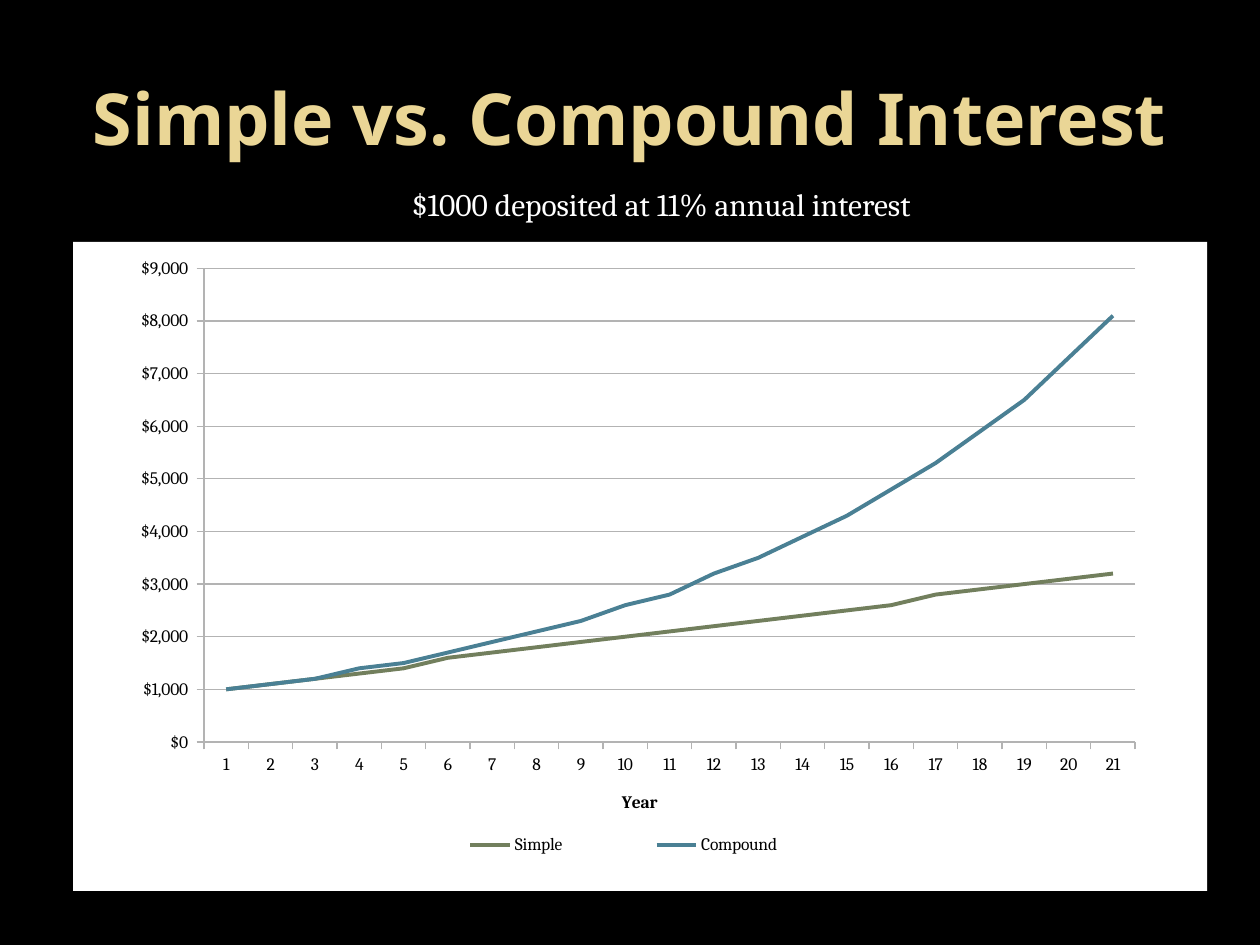
from lxml.etree import SubElement
from pptx import Presentation
from pptx.chart.data import CategoryChartData
from pptx.dml.color import RGBColor
from pptx.enum.chart import XL_CHART_TYPE as ChartType, XL_LEGEND_POSITION as LegendPosition
from pptx.enum.chart import XL_TICK_MARK as TickMark
from pptx.enum.text import MSO_ANCHOR as Anchor, PP_ALIGN as Align
from pptx.oxml import parse_xml
from pptx.oxml.ns import nsdecls, qn
from pptx.util import Inches, Pt

COLORS = {"background": "000000", "title": "EAD696", "subtitle": "FFFFFF",
          "chart": "FFFFFF", "label": "000000", "grid": "B3B3B3",
          "Simple": "727F5D", "Compound": "4A8094"}
TITLE = "Simple vs. Compound Interest"
SUBTITLE = "$1000 deposited at 11% annual interest"
DEPOSIT, PERCENT = 1000, 11
YEARS = range(1, 22)
# Balances to the nearest hundred dollars
SERIES = {
    "Simple": [round(DEPOSIT + DEPOSIT * PERCENT * (year - 1) // 100, -2) for year in YEARS],
    "Compound": [round(DEPOSIT * (1 + PERCENT / 100) ** (year - 1), -2) for year in YEARS],
}
MONEY = '"$"#,##0_);[Red]\\("$"#,##0\\)'
TITLE_BOX = (0.5, 0.3, 9, 1.25)
SUBTITLE_BOX = (3.17, 1.42, 4.53, 0.4)
CHART_BOX = (0.58, 1.92, 9, 5.15)
# Inches from the top left corner of the chart
PLOT_LAYOUT = {"x": 1.04, "y": 0.21, "w": 7.39, "h": 3.76}
LEGEND_LAYOUT = {"x": 2.45, "y": 4.63, "w": 3.84, "h": 0.31}
AXIS_TITLE_LAYOUT = {"x": 4.33, "y": 4.33}


def color(name):
    return RGBColor.from_string(COLORS[name])


def set_font(font, **values):
    for name, value in values.items():
        if name == "color":
            font.color.rgb = color(value)
        else:
            setattr(font, name, value)


def add_text(slide, text, box, frame_format, align, **font):
    frame = slide.shapes.add_textbox(*map(Inches, box)).text_frame
    for name, value in frame_format.items():
        setattr(frame, name, value)
    paragraph = frame.paragraphs[0]
    paragraph.alignment = align
    run = paragraph.add_run()
    run.text = text
    set_font(run.font, **font)


def set_layout(element, lengths, after=None, inner=False):
    """Place a chart part, turning inches into fractions of the chart area."""
    for old in element.findall(qn("c:layout")):
        element.remove(old)
    layout = parse_xml(f'<c:layout {nsdecls("c")}><c:manualLayout/></c:layout>')
    manual = layout[0]
    width, height = CHART_BOX[2:]
    settings = [("layoutTarget", "inner")] if inner else []
    settings += [("xMode", "edge"), ("yMode", "edge")]
    settings += [(name, length / (width if name in "xw" else height))
                 for name, length in lengths.items()]
    for name, value in settings:
        SubElement(manual, qn(f"c:{name}")).set("val", str(value))
    if after is None:
        element.insert(0, layout)
    else:
        element.find(qn(after)).addnext(layout)


def add_interest_chart(slide):
    data = CategoryChartData(number_format=MONEY)
    data.categories = [str(year) for year in YEARS]
    for name, values in SERIES.items():
        data.add_series(name, values)
    chart = slide.shapes.add_chart(ChartType.LINE, *map(Inches, CHART_BOX), data).chart
    chart.has_title = False
    set_font(chart.font, name="Cambria", size=Pt(10), color="label")
    chart_part = chart.element.find(qn("c:chart"))
    chart_part.addnext(parse_xml(
        f'<c:spPr {nsdecls("c", "a")}><a:solidFill><a:srgbClr val="{COLORS["chart"]}"/>'
        '</a:solidFill><a:ln><a:noFill/></a:ln></c:spPr>'))
    set_layout(chart_part.find(qn("c:plotArea")), PLOT_LAYOUT, inner=True)

    chart.plots[0].vary_by_categories = False
    for series in chart.plots[0].series:
        series.smooth = False
        series.format.line.width = Pt(2.25)
        series.format.line.color.rgb = color(series.name)

    year_axis, money_axis = chart.category_axis, chart.value_axis
    money_axis.has_major_gridlines = True
    for part in (year_axis, money_axis, money_axis.major_gridlines):
        part.format.line.color.rgb = color("grid")
        part.format.line.width = Pt(0.75)
    for axis in (year_axis, money_axis):
        axis.major_tick_mark = TickMark.OUTSIDE
    money_axis.minimum_scale, money_axis.maximum_scale = 0, 9000
    money_axis.major_unit = 1000
    money_axis.tick_labels.number_format = MONEY
    money_axis.tick_labels.number_format_is_linked = False

    axis_title = year_axis.axis_title
    run = axis_title.text_frame.paragraphs[0].add_run()
    run.text = "Year"
    set_font(run.font, name="Cambria", size=Pt(10), bold=True, color="label")
    set_layout(axis_title._element, AXIS_TITLE_LAYOUT, after="c:tx")

    chart.has_legend = True
    chart.legend.position = LegendPosition.RIGHT
    chart.legend.include_in_layout = False
    set_layout(chart.legend._element, LEGEND_LAYOUT, after="c:legendPos")


def main():
    presentation = Presentation()
    presentation.slide_width, presentation.slide_height = Inches(10), Inches(7.5)
    slide = presentation.slides.add_slide(presentation.slide_layouts[6])
    slide.background.fill.solid()
    slide.background.fill.fore_color.rgb = color("background")
    add_text(slide, TITLE, TITLE_BOX, {"word_wrap": True, "vertical_anchor": Anchor.MIDDLE},
             Align.CENTER, name="Noto Sans", size=Pt(41), bold=True, color="title")
    add_interest_chart(slide)
    add_text(slide, SUBTITLE, SUBTITLE_BOX, {"word_wrap": False}, Align.LEFT,
             name="Cambria", size=Pt(18), color="subtitle")
    presentation.save("out.pptx")


if __name__ == "__main__":
    main()
